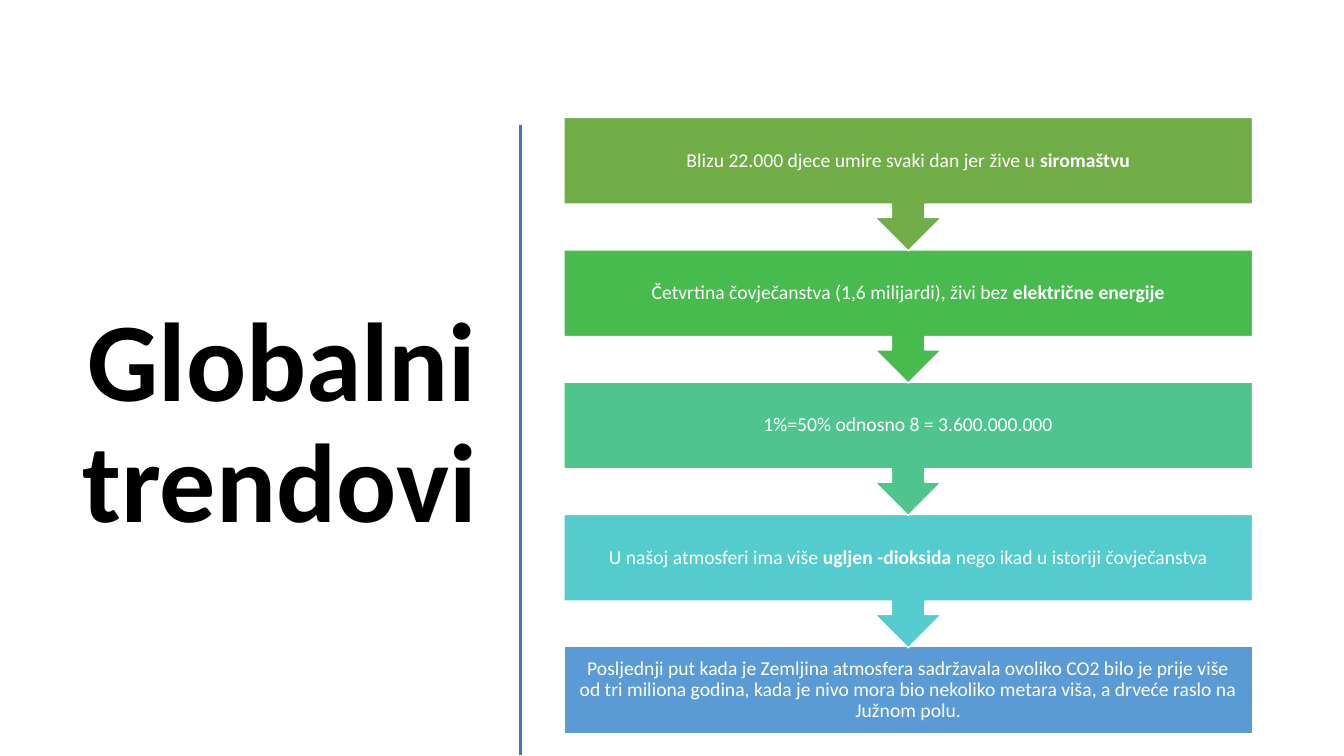
"""Build the slide on global trends: a large title beside a chain of steps."""
import pptx
import pptx.dml.color
import pptx.enum.shapes
import pptx.enum.text
import pptx.oxml
import pptx.util

RGBColor = pptx.dml.color.RGBColor
Align = pptx.enum.text.PP_ALIGN
Shape = pptx.enum.shapes.MSO_SHAPE

PX = 9525
FONT = "Calibri"
BLACK = RGBColor(0x00, 0x00, 0x00)
WHITE = RGBColor(0xFF, 0xFF, 0xFF)
RULE_BLUE = RGBColor(0x44, 0x72, 0xC4)
GREEN = RGBColor(0x70, 0xAD, 0x47)
BRIGHT_GREEN = RGBColor(0x48, 0xBB, 0x4F)
MINT = RGBColor(0x4D, 0xC5, 0x8D)
TURQUOISE = RGBColor(0x54, 0xCC, 0xCD)
BLUE = RGBColor(0x5B, 0x9B, 0xD5)

STEPS = [
    (GREEN, [("Blizu 22.000 djece umire svaki dan jer žive u ", False),
             ("siromaštvu", True)]),
    (BRIGHT_GREEN, [("Četvrtina čovječanstva (1,6 milijardi), živi bez ", False),
                    ("električne energije", True)]),
    (MINT, [("1%=50% odnosno 8 = 3.600.000.000", False)]),
    (TURQUOISE, [("U našoj atmosferi ima više ", False),
                 ("ugljen -dioksida ", True),
                 ("nego ikad u istoriji čovječanstva", False)]),
    (BLUE, [("Posljednji put kada je Zemljina atmosfera sadržavala ovoliko CO2 "
             "bilo je prije više od tri miliona godina, kada je nivo mora bio "
             "nekoliko metara viša, a drveće raslo na Južnom polu.", False)]),
]


def px(*lengths):
    """Turn pixel lengths into a list of EMU lengths."""
    return [pptx.util.Emu(length * PX) for length in lengths]


def write(para, spans, size, color, align):
    """Fill a paragraph with (text, bold) spans in one common style."""
    para.alignment = align
    para.line_spacing = 0.9
    para.font.name = FONT
    para.font.size = pptx.util.Pt(size)
    para.font.color.rgb = color
    for text, bold in spans:
        span = para.add_run()
        span.text = text
        span.font.bold = bold


def place_title(page, left, top, width, height):
    """Move the title placeholder into the given box and fill it."""
    title = page.shapes.title
    title.left, title.top, title.width, title.height = px(left, top, width, height)
    frame = title.text_frame
    frame.word_wrap = True
    frame.auto_size = pptx.enum.text.MSO_AUTO_SIZE.NONE
    frame.vertical_anchor = pptx.enum.text.MSO_ANCHOR.MIDDLE
    write(frame.paragraphs[0], [("Globalni trendovi", True)], 80, BLACK, Align.RIGHT)


def draw_rule(page, left, top, height):
    """Draw the vertical rule between the title and the steps."""
    rule = page.shapes.add_connector(
        pptx.enum.shapes.MSO_CONNECTOR.STRAIGHT, *px(left, top, left, top + height))
    rule.line.color.rgb = RULE_BLUE
    rule.line.width = pptx.util.Pt(2)
    rule._element.spPr.append(pptx.oxml.parse_xml(
        '<a:effectLst xmlns:a="http://schemas.openxmlformats.org/drawingml/2006/main"/>'))


def draw_step(page, kind, color, spans, left, top, width, height):
    """Draw one filled step with its text."""
    box = page.shapes.add_shape(kind, *px(left, top, width, height))
    box.shadow.inherit = False
    box.fill.solid()
    box.fill.fore_color.rgb = color
    box.line.color.rgb = WHITE
    box.line.width = pptx.util.Pt(1)
    frame = box.text_frame
    frame.word_wrap = True
    frame.vertical_anchor = pptx.enum.text.MSO_ANCHOR.MIDDLE
    margin, = px(11)
    frame.margin_left = frame.margin_right = margin
    frame.margin_top = frame.margin_bottom = margin
    write(frame.paragraphs[0], spans, 14, WHITE, Align.CENTER)


def draw_steps(page, left, top, width, height):
    """Stack the steps from the bottom up, each pointing at the next."""
    last = len(STEPS) - 1
    box_height = 83
    pitch = (height - box_height) // last
    for index in range(last, -1, -1):
        color, spans = STEPS[index]
        if index == last:
            kind, step_height = Shape.RECTANGLE, box_height
        else:
            kind, step_height = Shape.DOWN_ARROW_CALLOUT, pitch + 1
        draw_step(page, kind, color, spans, left, top + index * pitch, width, step_height)


def main():
    """Build the deck and save it."""
    deck = pptx.Presentation()
    deck.slide_width, deck.slide_height = px(1280, 720)
    page = deck.slides.add_slide(deck.slide_layouts[5])
    place_title(page, 50, 112, 414, 587)
    draw_rule(page, 496, 119, 600)
    draw_steps(page, 537, 112, 656, 587)
    deck.save("out.pptx")


if __name__ == "__main__":
    main()
